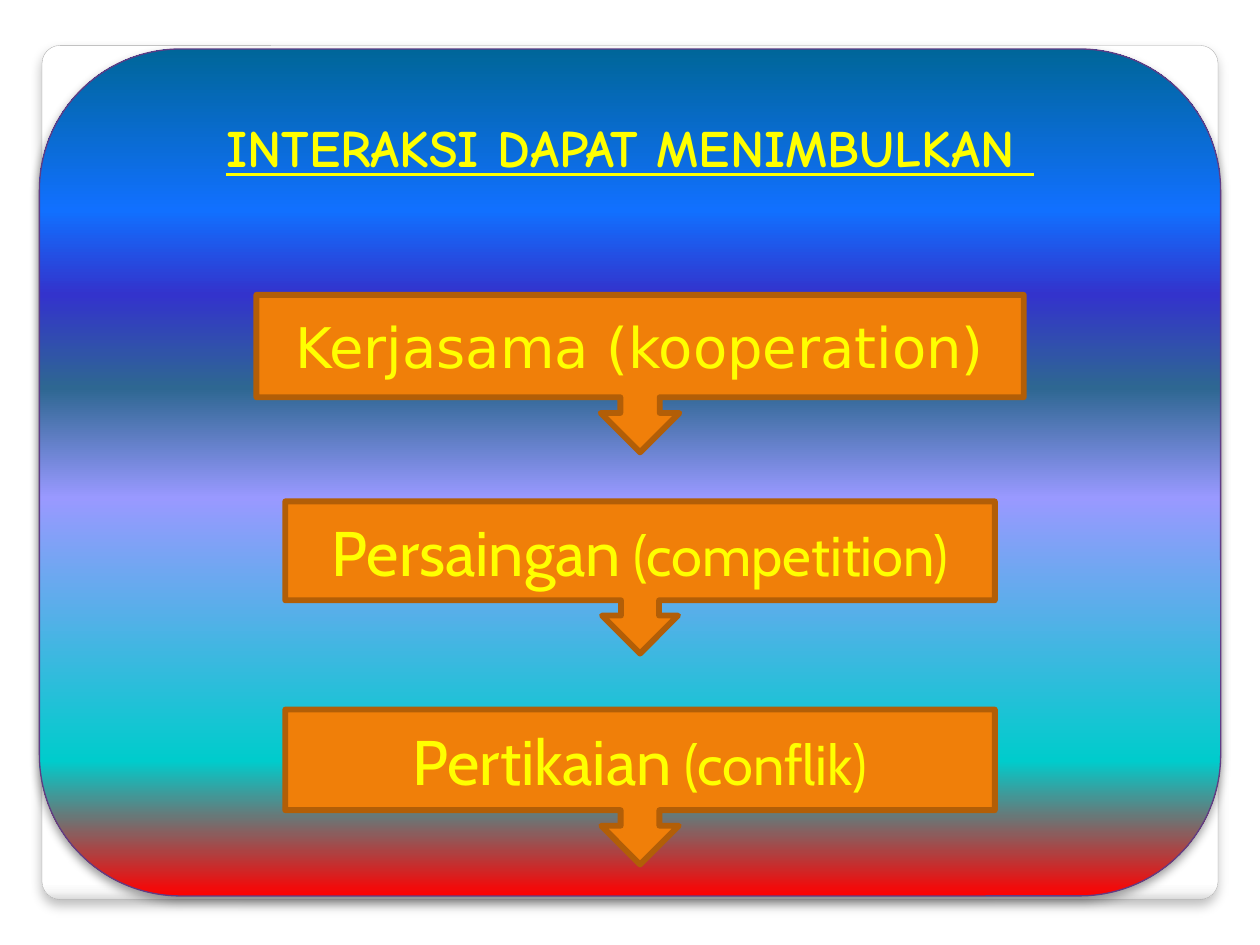
"""Build a slide with three callouts on a rainbow panel: what interaction can lead to."""
from dataclasses import dataclass

from lxml.etree import SubElement
from pptx import Presentation
from pptx.dml.color import RGBColor
from pptx.enum.shapes import MSO_SHAPE as Preset
from pptx.enum.text import MSO_ANCHOR as Anchor, MSO_AUTO_SIZE as AutoSize, PP_ALIGN as Align
from pptx.oxml.ns import qn
from pptx.util import Pt

COLORS = {
    "white": "FFFFFF", "pale": "F7F7F7", "silver": "DADADA", "frame line": "A4A4A4",
    "red": "FF0000", "turquoise": "00CCCC", "lilac": "9999FF", "slate": "2E6792",
    "indigo": "3333CC", "blue": "1170FF", "deep blue": "006699", "panel line": "603C84",
    "orange": "F07F09", "brown": "B25E07", "yellow": "FFFF00", "black": "000000",
}
SLIDE_WIDTH, SLIDE_HEIGHT = 720, 540
CALLOUT_CENTER = 365.75


@dataclass
class Card:
    top: float
    width: float
    height: float
    stops: list[tuple[int, str]]
    angle: int
    line: str
    line_width: float
    shadow: tuple[int, float, float]
    corner: float


@dataclass
class Callout:
    top: float
    width: float
    height: float
    font: str
    runs: list[tuple[str, int]]


CARDS = [
    Card(26, 672, 488, [(0, "white"), (98, "white"), (99, "pale"), (100, "silver")],
         270, "frame line", 0.16, (25, 6, 4), 0.021),
    Card(28, 675, 484, [(0, "red"), (16, "turquoise"), (47, "lilac"), (60, "slate"),
                        (71, "indigo"), (81, "blue"), (100, "deep blue")],
         90, "panel line", 0.75, (40, 5.2, 3), 0.1667),
]
CALLOUTS = [
    Callout(168.5, 438.5, 90, "DejaVu Sans", [("Kerjasama (kooperation)", 32)]),
    Callout(286.5, 405.5, 87, "Cabin", [("Persaingan", 36), (" (competition)", 32)]),
    Callout(405.5, 405.5, 88.5, "Cabin", [("Pertikaian", 36), (" (conflik)", 32)]),
]


def color(name: str) -> RGBColor:
    """Return a named colour."""
    return RGBColor.from_string(COLORS[name])


def add_color(parent, name: str):
    """Append a named colour element to an XML parent."""
    return SubElement(parent, qn("a:srgbClr"), val=COLORS[name])


def add_card(slide, card: Card) -> None:
    """Draw a centred rounded card with a gradient and a soft shadow."""
    shape = slide.shapes.add_shape(
        Preset.ROUNDED_RECTANGLE, Pt((SLIDE_WIDTH - card.width) / 2), Pt(card.top),
        Pt(card.width), Pt(card.height))
    shape.adjustments[0] = card.corner
    shape.fill.gradient()
    shape.fill.gradient_angle = card.angle
    shape.line.color.rgb = color(card.line)
    shape.line.width = Pt(card.line_width)
    shape.shadow.inherit = False
    properties = shape._element.spPr
    stop_list = properties.find(".//" + qn("a:gsLst"))
    for stop in list(stop_list):
        stop_list.remove(stop)
    for percent, name in card.stops:
        add_color(SubElement(stop_list, qn("a:gs"), pos=str(percent * 1000)), name)
    opacity, blur, distance = card.shadow
    shadow = SubElement(properties.find(qn("a:effectLst")), qn("a:outerShdw"),
                        blurRad=str(Pt(blur)), dist=str(Pt(distance)),
                        dir="5400000", rotWithShape="0")
    SubElement(add_color(shadow, "black"), qn("a:alpha"), val=str(opacity * 1000))


def add_callout(slide, callout: Callout) -> None:
    """Draw an orange down-arrow callout with its label."""
    shape = slide.shapes.add_shape(
        Preset.DOWN_ARROW_CALLOUT, Pt(CALLOUT_CENTER - callout.width / 2), Pt(callout.top),
        Pt(callout.width), Pt(callout.height))
    shape.shadow.inherit = False
    shape.fill.solid()
    shape.fill.fore_color.rgb = color("orange")
    shape.line.color.rgb = color("brown")
    shape.line.width = Pt(3.35)
    shape.text_frame.vertical_anchor = Anchor.MIDDLE
    para = shape.text_frame.paragraphs[0]
    para.alignment = Align.CENTER
    para.font.name = callout.font
    for text, size in callout.runs:
        span = para.add_run()
        span.text = text
        span.font.size = Pt(size)
        span.font.color.rgb = color("yellow")


def place_title(slide, text: str) -> None:
    """Format the title placeholder and bring it in front of the cards."""
    title = slide.shapes.title
    title.left, title.top, title.width, title.height = Pt(60), Pt(60), Pt(600), Pt(48)
    frame = title.text_frame
    frame.text = text
    frame.word_wrap = True
    frame.auto_size = AutoSize.NONE
    frame.vertical_anchor = Anchor.MIDDLE
    para = frame.paragraphs[0]
    para.alignment = Align.CENTER
    para.font.name = "Comic Neue"
    para.font.size = Pt(30)
    para.font.bold = para.font.underline = True
    para.font.color.rgb = color("yellow")
    slide.shapes._spTree.append(title._element)


def main() -> None:
    """Build and save the deck."""
    deck = Presentation()
    deck.slide_width, deck.slide_height = Pt(SLIDE_WIDTH), Pt(SLIDE_HEIGHT)
    slide = deck.slides.add_slide(deck.slide_layouts[5])
    for card in CARDS:
        add_card(slide, card)
    place_title(slide, "INTERAKSI DAPAT MENIMBULKAN ")
    for callout in CALLOUTS:
        add_callout(slide, callout)
    deck.save("out.pptx")


if __name__ == "__main__":
    main()
